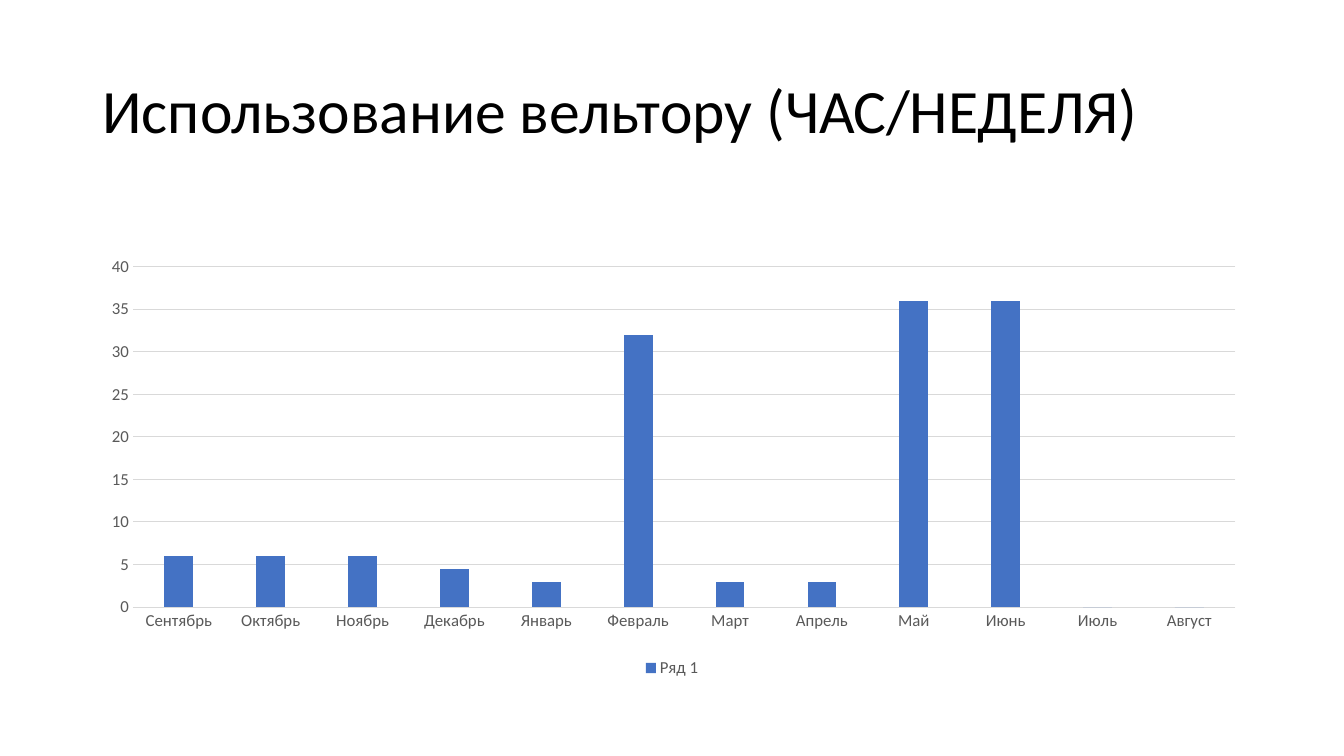
from lxml.etree import SubElement, Element
from pptx import Presentation
from pptx.chart.data import CategoryChartData as ChartData
from pptx.dml.color import RGBColor
from pptx.enum.chart import XL_CHART_TYPE as ChartType
from pptx.enum.chart import XL_LEGEND_POSITION as LegendPosition
from pptx.enum.chart import XL_TICK_MARK as TickMark
from pptx.enum.text import MSO_ANCHOR as Anchor
from pptx.enum.text import PP_ALIGN as Align
from pptx.oxml.ns import qn
from pptx.util import Inches, Pt

COLORS = {"text": "000000", "label": "595959", "rule": "D9D9D9", "bar": "4472C4", "back": "FFFFFF"}
MONTHLY_HOURS = {
    "Сентябрь": 6, "Октябрь": 6, "Ноябрь": 6, "Декабрь": 4.5,
    "Январь": 3, "Февраль": 32, "Март": 3, "Апрель": 3,
    "Май": 36, "Июнь": 36, "Июль": 0, "Август": 0,
}
PLOT_PERCENT = {"x": 3.5, "y": 13.4, "w": 95.1, "h": 71}


def color(name):
    return RGBColor.from_string(COLORS[name])


def format_font(font, size=12, tint="label", face="Calibri"):
    font.size = Pt(size)
    font.name = face
    font.color.rgb = color(tint)


def write_text(frame, text, spacing=0.9, align=Align.LEFT, anchor=Anchor.MIDDLE, **style):
    frame.word_wrap = True
    frame.vertical_anchor = anchor
    paragraph = frame.paragraphs[0]
    paragraph.alignment = align
    paragraph.line_spacing = spacing
    run = paragraph.add_run()
    run.text = text
    format_font(run.font, **style)


def style_line(line, tint="rule", width=0.75):
    line.color.rgb = color(tint)
    line.width = Pt(width)


def place_plot(chart, percents):
    plot_area = chart.element.find(".//" + qn("c:plotArea"))
    for old_layout in plot_area.findall(qn("c:layout")):
        plot_area.remove(old_layout)
    layout = Element(qn("c:layout"))
    manual = SubElement(layout, qn("c:manualLayout"))
    settings = {"layoutTarget": "inner", "xMode": "edge", "yMode": "edge"}
    settings.update({key: str(value / 100) for key, value in percents.items()})
    for key, value in settings.items():
        SubElement(manual, qn("c:" + key)).set("val", value)
    plot_area.insert(0, layout)


class SlideBuilder:
    """Holds the style grid and the current slide, and adds its elements."""

    COLUMNS, ROWS = 160, 90

    def __init__(self, presentation):
        self.column = presentation.slide_width / self.COLUMNS
        self.row = presentation.slide_height / self.ROWS
        self.slide = presentation.slides.add_slide(presentation.slide_layouts[5])
        fill = self.slide.background.fill
        fill.solid()
        fill.fore_color.rgb = color("back")

    def box(self, left, top, width, height):
        return (round(left * self.column), round(top * self.row),
                round(width * self.column), round(height * self.row))

    def title(self, text, *cells):
        shape = self.slide.shapes.title
        shape.left, shape.top, shape.width, shape.height = self.box(*cells)
        write_text(shape.text_frame, text, size=44, tint="text")

    def column_chart(self, series_name, values, *cells):
        data = ChartData()
        data.categories = list(values)
        data.add_series(series_name, list(values.values()))
        chart = self.slide.shapes.add_chart(
            ChartType.COLUMN_CLUSTERED, *self.box(*cells), data).chart
        format_font(chart.font, size=10, tint="text")
        chart.has_title = False
        chart.has_legend = True
        chart.legend.position = LegendPosition.BOTTOM
        chart.legend.include_in_layout = False
        format_font(chart.legend.font)

        plot = chart.plots[0]
        plot.vary_by_categories = False
        plot.gap_width = 219
        plot.overlap = -27
        fill = plot.series[0].format.fill
        fill.solid()
        fill.fore_color.rgb = color("bar")

        for axis in (chart.category_axis, chart.value_axis):
            axis.major_tick_mark = axis.minor_tick_mark = TickMark.NONE
            format_font(axis.tick_labels.font)
        style_line(chart.category_axis.format.line)
        value_axis = chart.value_axis
        value_axis.format.line.fill.background()
        value_axis.minimum_scale, value_axis.maximum_scale = 0, 40
        value_axis.major_unit = 5
        style_line(value_axis.major_gridlines.format.line)
        place_plot(chart, PLOT_PERCENT)


def main():
    presentation = Presentation()
    presentation.slide_width = Inches(13.33)
    presentation.slide_height = Inches(7.5)
    builder = SlideBuilder(presentation)
    builder.title("Использование вельтору (ЧАС/НЕДЕЛЯ)", 11, 4.8, 138, 17.4)
    builder.column_chart("Ряд 1", MONTHLY_HOURS, 11, 24.1, 138, 57.1)
    presentation.save("out.pptx")


if __name__ == "__main__":
    main()
